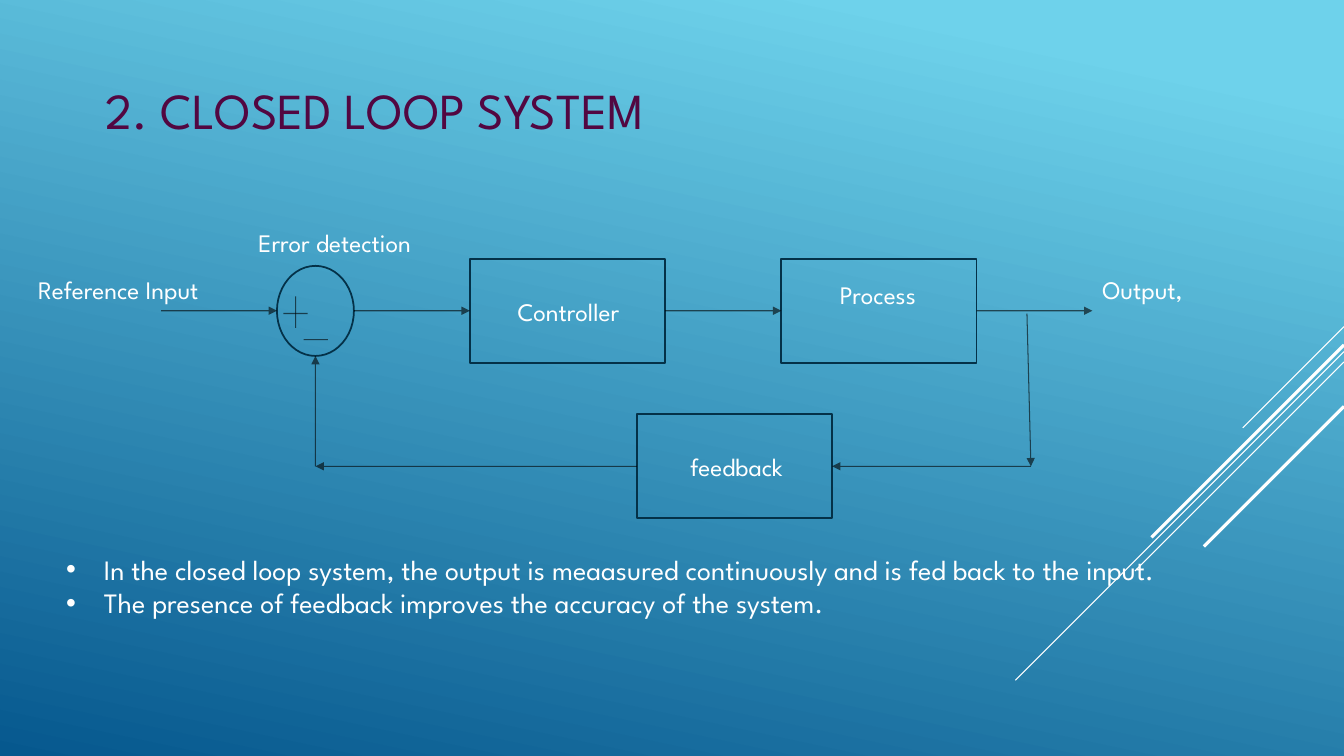
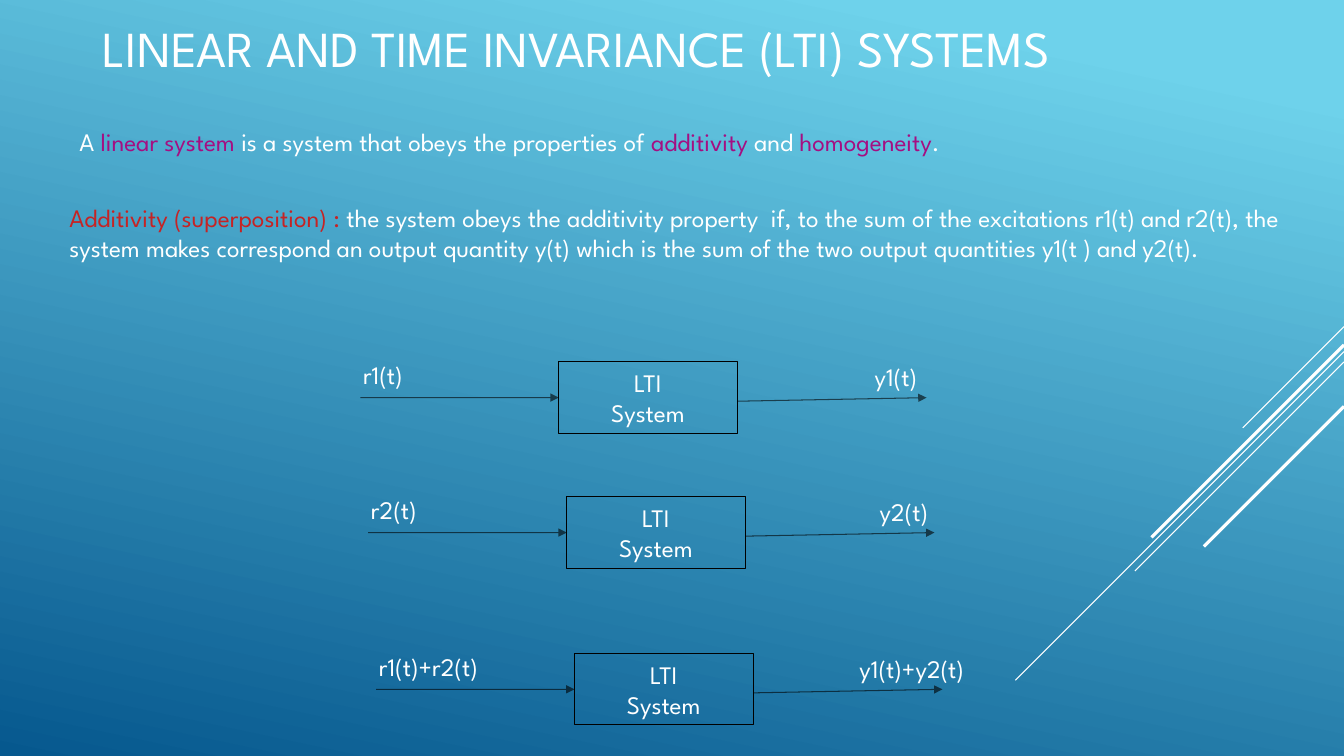
from typing import NamedTuple

from lxml.etree import SubElement
from pptx import Presentation
from pptx.dml.color import RGBColor
from pptx.enum.shapes import MSO_CONNECTOR, MSO_SHAPE
from pptx.enum.text import MSO_ANCHOR, PP_ALIGN
from pptx.oxml.ns import qn
from pptx.shapes.autoshape import Shape
from pptx.shapes.connector import Connector
from pptx.slide import Slide
from pptx.text.text import TextFrame
from pptx.util import Cm, Pt

WHITE = RGBColor(0xFF, 0xFF, 0xFF)
BLACK = RGBColor(0x00, 0x00, 0x00)
SKY = RGBColor(0x6E, 0xD2, 0xEB)
OCEAN = RGBColor(0x06, 0x58, 0x8E)
NAVY = RGBColor(0x04, 0x31, 0x48)
PLUM = RGBColor(0x52, 0x07, 0x41)
MAGENTA = RGBColor(0xA5, 0x0E, 0x82)
RED = RGBColor(0xC6, 0x23, 0x24)

FONT = "League Spartan"
PAGE_WIDTH, PAGE_HEIGHT = 33.87, 19.05
TOP, LEFT, BOTTOM, RIGHT = range(4)


class Span(NamedTuple):
    text: str
    color: RGBColor = WHITE


class Frame(NamedTuple):
    """Place and size in centimetres."""
    left: float
    top: float
    width: float
    height: float


class Point(NamedTuple):
    x: float
    y: float


class Joint(NamedTuple):
    """Middle of one side of a rectangle."""
    shape: Shape
    side: int


class Stripe(NamedTuple):
    """Diagonal that falls from the right edge of the page."""
    top: float
    run: float
    weight: float


class Label(NamedTuple):
    text: str
    frame: Frame
    align: PP_ALIGN = PP_ALIGN.CENTER


class SystemRow(NamedTuple):
    left: float
    top: float
    excitation: str
    response: str


STRIPES = (
    Stripe(8.23, 2.55, 0.75),
    Stripe(8.86, 8.28, 0.75),
    Stripe(9.12, 5.27, 0.75),
    Stripe(8.69, 4.85, 2.25),
    Stripe(10.24, 3.53, 2.25),
)


def write(frame: TextFrame, paragraphs: list[list[Span]], size: float,
          align: PP_ALIGN = PP_ALIGN.LEFT, bullet: bool = False) -> None:
    frame.word_wrap = True
    for index, spans in enumerate(paragraphs):
        para = frame.paragraphs[0] if index == 0 else frame.add_paragraph()
        para.alignment = align
        if bullet:
            add_bullet(para)
        for span in spans:
            run = para.add_run()
            run.text = span.text
            run.font.name = FONT
            run.font.size = Pt(size)
            run.font.color.rgb = span.color


def add_bullet(para) -> None:
    properties = para._p.get_or_add_pPr()
    properties.set("marL", str(Cm(0.95)))
    properties.set("indent", str(-Cm(0.95)))
    SubElement(properties, qn("a:buFont")).set("typeface", "Arial")
    SubElement(properties, qn("a:buChar")).set("char", "•")


def add_text(page: Slide, frame: Frame, paragraphs: list[list[Span]],
             size: float = 18, align: PP_ALIGN = PP_ALIGN.LEFT,
             bullet: bool = False) -> Shape:
    box = page.shapes.add_textbox(*map(Cm, frame))
    write(box.text_frame, paragraphs, size, align, bullet)
    return box


def add_title(page: Slide, frame: Frame, text: str, color: RGBColor) -> None:
    box = add_text(page, frame, [[Span(text, color)]], 36)
    box.text_frame.vertical_anchor = MSO_ANCHOR.BOTTOM


def add_outline(page: Slide, kind: MSO_SHAPE, frame: Frame,
                color: RGBColor, weight: float) -> Shape:
    shape = page.shapes.add_shape(kind, *map(Cm, frame))
    shape.shadow.inherit = False
    shape.fill.background()
    shape.line.color.rgb = color
    shape.line.width = Pt(weight)
    return shape


def add_line(page: Slide, start: Point | Joint, end: Point | Joint,
             color: RGBColor, weight: float) -> Connector:
    ends = [Point(0, 0) if isinstance(spot, Joint) else spot
            for spot in (start, end)]
    line = page.shapes.add_connector(
        MSO_CONNECTOR.STRAIGHT, *(Cm(value) for spot in ends for value in spot))
    if isinstance(start, Joint):
        line.begin_connect(*start)
    if isinstance(end, Joint):
        line.end_connect(*end)
    line.line.color.rgb = color
    line.line.width = Pt(weight)
    SubElement(line._element.spPr, qn("a:effectLst"))
    return line


def add_signal(page: Slide, start: Point | Joint, end: Point | Joint,
               arrow: bool = True) -> None:
    """Draw a translucent diagram line, with an arrowhead if wanted."""
    line = add_line(page, start, end, BLACK, 0.75)
    outline = line._element.spPr.find(qn("a:ln"))
    color = outline.find(".//" + qn("a:srgbClr"))
    SubElement(color, qn("a:alpha")).set("val", "60000")
    if arrow:
        SubElement(outline, qn("a:tailEnd")).set("type", "triangle")


def set_background(deck: Presentation) -> None:
    fill = deck.slide_master.background.fill
    fill.gradient()
    fill.gradient_angle = 360 - 102
    for stop, color, position in zip(
            fill.gradient_stops, (SKY, OCEAN), (0.1, 1.0)):
        stop.color.rgb = color
        stop.position = position


def add_page(deck: Presentation) -> Slide:
    page = deck.slides.add_slide(deck.slide_layouts[6])
    for stripe in STRIPES:
        add_line(page, Point(PAGE_WIDTH, stripe.top),
                 Point(PAGE_WIDTH - stripe.run, stripe.top + stripe.run),
                 WHITE, stripe.weight)
    return page


def build_closed_loop(deck: Presentation) -> None:
    page = add_page(deck)
    add_text(page, Frame(1.42, 13.79, 29.24, 3.68), [
        [Span("In the closed loop system, the output is meaasured "
              "continuously and is fed back to the input.")],
        [Span("The presence of feedback improves the accuracy of the system.")],
    ], 20, bullet=True)

    controller, process, feedback = (
        add_outline(page, MSO_SHAPE.RECTANGLE,
                    Frame(left, top, 4.92, 2.62), NAVY, 1.25)
        for left, top in ((11.84, 6.52), (19.69, 6.52), (16.05, 10.44)))
    detector = Frame(6.98, 6.7, 1.94, 2.27)
    add_outline(page, MSO_SHAPE.OVAL, detector, NAVY, 1.25)

    forward, back = 7.83, 11.75
    center = detector.left + detector.width / 2
    signals = (
        (Point(4.06, forward), Point(detector.left, forward)),
        (Point(detector.left + detector.width, forward),
         Joint(controller, LEFT)),
        (Joint(controller, RIGHT), Joint(process, LEFT)),
        (Joint(process, RIGHT), Point(27.53, forward)),
        (Point(25.88, 7.9), Point(25.98, back)),
        (Point(25.98, back), Joint(feedback, RIGHT)),
        (Joint(feedback, LEFT), Point(center, back)),
        (Point(center, back), Point(center, detector.top + detector.height)),
    )
    for start, end in signals:
        add_signal(page, start, end)

    sign_strokes = (
        (Point(7.14, 7.9), Point(7.75, 7.9)),
        (Point(7.45, 7.47), Point(7.45, 8.26)),
        (Point(7.65, 8.56), Point(8.26, 8.56)),
    )
    for start, end in sign_strokes:
        add_signal(page, start, end, arrow=False)

    labels = (
        Label("Process", Frame(19.89, 6.91, 4.47, 1.02)),
        Label("Controller", Frame(12.09, 7.34, 4.47, 1.02)),
        Label("feedback", Frame(16.33, 11.25, 4.47, 1.02)),
        Label("Reference Input", Frame(0.71, 6.78, 5.61, 1.02), PP_ALIGN.LEFT),
        Label("Output,", Frame(27.53, 6.78, 3.84, 1.02), PP_ALIGN.LEFT),
        Label("Error detection", Frame(5.31, 5.61, 6.25, 1.02)),
    )
    for label in labels:
        add_text(page, label.frame, [[Span(label.text)]], align=label.align)
    add_title(page, Frame(2.41, 1.35, 15.65, 2.29),
              "2. CLOSED LOOP SYSTEM", PLUM)


def add_system_row(page: Slide, row: SystemRow) -> None:
    width, height = 4.5, 1.8
    block = add_outline(page, MSO_SHAPE.RECTANGLE,
                        Frame(row.left, row.top, width, height), BLACK, 0.75)
    write(block.text_frame, [[Span("LTI")], [Span("System")]], 18,
          PP_ALIGN.CENTER)
    block.text_frame.vertical_anchor = MSO_ANCHOR.MIDDLE

    middle, right = row.top + height / 2, row.left + width
    add_signal(page, Point(row.left - 5, middle), Joint(block, LEFT))
    add_signal(page, Point(right, middle + 0.09), Point(right + 4.77, middle))
    add_text(page, Frame(row.left - 5.18, row.top - 0.18, 4, 1.02),
             [[Span(row.excitation)]])
    add_text(page, Frame(row.left + 6.5, row.top - 0.13, 4, 1.02),
             [[Span(row.response)]], align=PP_ALIGN.CENTER)


def build_lti_systems(deck: Presentation) -> None:
    page = add_page(deck)
    add_text(page, Frame(1.5, 4.98, 31.39, 2.57), [[
        Span("Additivity (superposition) : ", RED),
        Span("the system obeys the additivity property  if, to the sum of the "
             "excitations r1(t) and r2(t), the system makes correspond an "
             "output quantity y(t) which is the sum of the two output "
             "quantities y1(t ) and y2(t)."),
    ]])
    rows = (
        SystemRow(14.08, 9.12, "r1(t)", "y1(t)"),
        SystemRow(14.28, 12.52, "r2(t)", "y2(t)"),
        SystemRow(14.48, 16.47, "r1(t)+r2(t)", "y1(t)+y2(t)"),
    )
    for row in rows:
        add_system_row(page, row)
    add_title(page, Frame(2.34, 0.03, 28.24, 2.06),
              "LINEAR AND TIME INVARIANCE (LTI) SYSTEMS", WHITE)
    add_text(page, Frame(1.75, 3.07, 31.12, 1.02), [[
        Span("A "),
        Span("linear system ", MAGENTA),
        Span("is a system that obeys the properties of "),
        Span("additivity", MAGENTA),
        Span(" and "),
        Span("homogeneity", MAGENTA),
        Span("."),
    ]], align=PP_ALIGN.JUSTIFY)


def main() -> None:
    deck = Presentation()
    deck.slide_width, deck.slide_height = Cm(PAGE_WIDTH), Cm(PAGE_HEIGHT)
    set_background(deck)
    build_closed_loop(deck)
    build_lti_systems(deck)
    deck.save("out.pptx")


if __name__ == "__main__":
    main()
